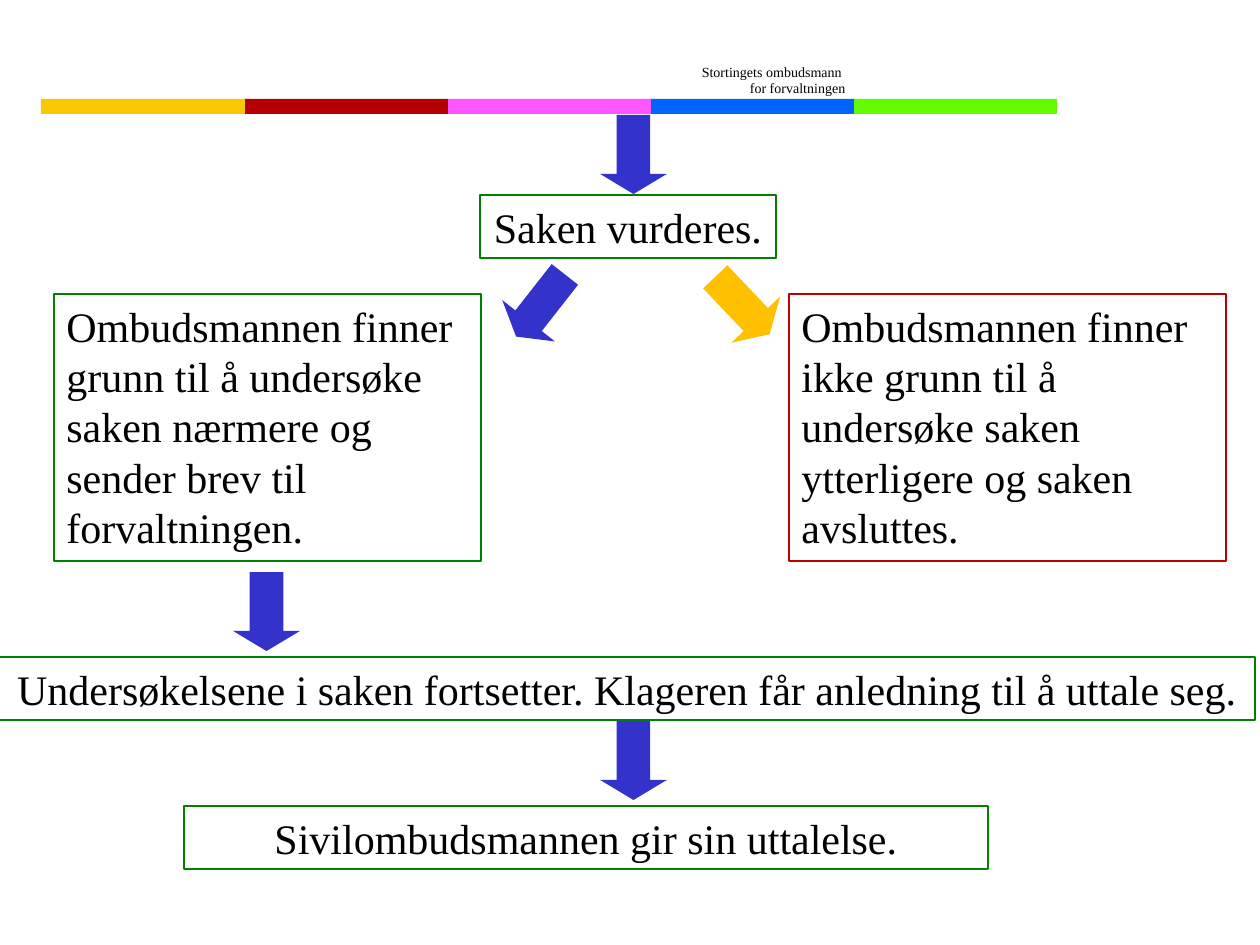
from dataclasses import dataclass
from pptx import Presentation
from pptx import util as u
from pptx.dml.color import RGBColor
from pptx.enum import shapes, text

EMU = 914400 / 126  # one px


@dataclass(frozen=True)
class Theme:
    font: str = "Times New Roman"
    body: int = 24
    small: int = 8
    ink: str = "000000"
    blue: str = "3333CC"
    amber: str = "FFC000"
    green: str = "008000"
    red: str = "BE0000"
    bars: tuple = ("FAC800", "B40000", "FF55FF", "0064FA", "64FA00")


T = Theme()
LEFT, MID, RIGHT = text.PP_ALIGN.LEFT, text.PP_ALIGN.CENTER, text.PP_ALIGN.RIGHT


def px(*nums):
    return [u.Emu(round(n * EMU)) for n in nums]


def rgb(code):
    return RGBColor.from_string(code)


def draw(slide, kind, area, fill=None, line=None):
    shape = slide.shapes.add_shape(kind, *px(*area))
    shape.shadow.inherit = False
    if fill:
        shape.fill.solid()
        shape.fill.fore_color.rgb = rgb(fill)
    else:
        shape.fill.background()
    if line:
        shape.line.color.rgb = rgb(line)
        shape.line.width = u.Pt(1)
    else:
        shape.line.fill.background()
    return shape


def write(shape, words, size, align, anchor, wrap=True):
    frame = shape.text_frame
    frame.word_wrap = wrap
    frame.vertical_anchor = anchor
    para = frame.paragraphs[0]
    para.text = words
    para.alignment = align
    para.font.name = T.font
    para.font.size = u.Pt(size)
    para.font.color.rgb = rgb(T.ink)


def box(slide, area, words, align=MID, line=T.green, wrap=True):
    shape = draw(slide, shapes.MSO_SHAPE.RECTANGLE, area, line=line)
    write(shape, words, T.body, align, text.MSO_ANCHOR.TOP, wrap)


def arrow(slide, left, top, turn=0, fill=T.blue):
    shape = draw(slide, shapes.MSO_SHAPE.DOWN_ARROW, (left, top, 67, 79), fill)
    shape.adjustments[0] = 0.5
    shape.adjustments[1] = 0.3
    shape.rotation = turn


def header(slide):
    # Colour bars, the leftmost on top
    for i, fill in reversed(list(enumerate(T.bars))):
        area = (41 + 203 * i, 99, 204, 15)
        draw(slide, shapes.MSO_SHAPE.RECTANGLE, area, fill)
    # Name of the office
    label = slide.shapes.add_textbox(*px(654, 40, 204, 63))
    write(label, "Stortingets ombudsmann \vfor forvaltningen",
          T.small, RIGHT, text.MSO_ANCHOR.BOTTOM)


def main():
    deck = Presentation()
    deck.slide_width, deck.slide_height = px(1260, 945)
    slide = deck.slides.add_slide(deck.slide_layouts[6])
    header(slide)

    # Assessment and its two outcomes
    arrow(slide, 600, 115)
    arrow(slide, 709, 266, 316.5, T.amber)
    arrow(slide, 507, 266, 38.1)
    box(slide, (480, 195, 296, 63), "Saken vurderes.", wrap=False)
    box(slide, (54, 294, 427, 267),
        "Ombudsmannen finner grunn til å undersøke saken nærmere og "
        "sender brev til forvaltningen.", LEFT)
    box(slide, (789, 294, 437, 267),
        "Ombudsmannen finner ikke grunn til å undersøke saken "
        "ytterligere og saken avsluttes.", LEFT, T.red)

    # Further inquiry and final statement
    arrow(slide, 233, 572)
    box(slide, (-1, 657, 1256, 63),
        "Undersøkelsene i saken fortsetter. "
        "Klageren får anledning til å uttale seg.", wrap=False)
    arrow(slide, 600, 721)
    box(slide, (184, 806, 804, 63), "Sivilombudsmannen gir sin uttalelse.")

    deck.save("out.pptx")


if __name__ == "__main__":
    main()
